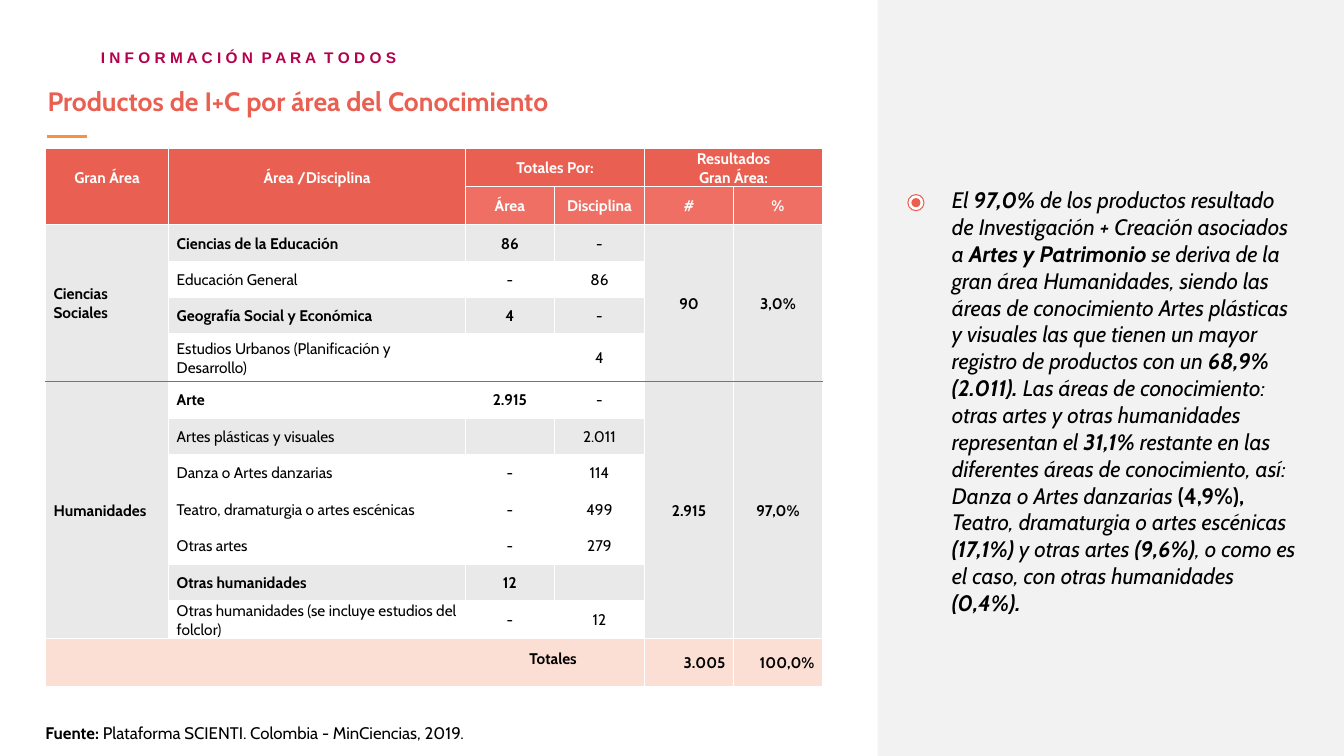
"""Build the slide on research and creation products by area of knowledge."""
from lxml.etree import SubElement
from pptx import Presentation
from pptx.dml.color import RGBColor
from pptx.enum.shapes import MSO_CONNECTOR, MSO_SHAPE
from pptx.enum.text import MSO_ANCHOR, PP_ALIGN
from pptx.oxml import parse_xml
from pptx.oxml.ns import nsdecls, qn
from pptx.util import Pt

CORAL = RGBColor(0xE9, 0x60, 0x52)
LIGHT = RGBColor(0xEF, 0x6F, 0x64)
PEACH = RGBColor(0xFB, 0xDE, 0xD4)
BRICK = RGBColor(0xCA, 0x53, 0x47)
ORANGE = RGBColor(0xF6, 0x92, 0x40)
MAGENTA = RGBColor(0xB6, 0x00, 0x4C)
GREY = RGBColor(0xE9, 0xE9, 0xE9)
PALE = RGBColor(0xF2, 0xF2, 0xF2)
WHITE = RGBColor(0xFF, 0xFF, 0xFF)
BLACK = RGBColor(0, 0, 0)

deck = Presentation()
deck.slide_width, deck.slide_height = Pt(960), Pt(540)
slide = deck.slides.add_slide(deck.slide_layouts[6])
shapes = slide.shapes


def add_text(place, inset, text, size, color, name="Cabin"):
    """Add a text box; parts between asterisks are bold."""
    frame = shapes.add_textbox(*map(Pt, place)).text_frame
    frame.word_wrap = True
    frame.margin_left = frame.margin_right = Pt(inset * 2)
    frame.margin_top = frame.margin_bottom = Pt(inset)
    para = frame.paragraphs[0]
    para.font.size, para.font.name = Pt(size), name
    para.font.color.rgb = color
    for i, part in enumerate(text.split("*")):
        if part:
            run = para.add_run()
            run.text = part
            run.font.bold = i % 2 == 1
    return para


def add_shape(kind, place, fill, line=None):
    """Add a flat shape with an optional outline."""
    shape = shapes.add_shape(kind, *map(Pt, place))
    shape.shadow.inherit = False
    shape.fill.solid()
    shape.fill.fore_color.rgb = fill
    if line is None:
        shape.line.fill.background()
    else:
        shape.line.color.rgb = line
        shape.line.width = Pt(0.75)


tag = add_text((72, 30.7, 295, 18), 0, "*I N F O R M A C I Ó N  P A R A  T O D O S*",
               11, MAGENTA, "Arial")
tag.line_spacing = 1.3
add_text((34, 60.5, 560, 23), 0, "*Productos de I+C por área del Conocimiento*", 19, CORAL)
add_text((22.4, 511, 474, 24.5), 5, "*Fuente: *Plataforma SCIENTI. Colombia - MinCiencias, 2019.",
         12, BLACK)

rule = shapes.add_connector(MSO_CONNECTOR.STRAIGHT, Pt(33.5), Pt(97.7), Pt(62.5), Pt(97.7))
rule.line.color.rgb, rule.line.width = ORANGE, Pt(2.25)
SubElement(rule._element.spPr, qn("a:effectLst"))

add_shape(MSO_SHAPE.RECTANGLE, (627, 0, 333, 540), PALE)
add_shape(MSO_SHAPE.OVAL, (648.5, 139, 11.5, 11.5), WHITE, CORAL)
add_shape(MSO_SHAPE.OVAL, (651, 141.5, 6.5, 6.5), CORAL)
note = add_text(
    (670, 128, 266.5, 359), 5,
    "El *97,0% *de los productos resultado de Investigación + Creación asociados a "
    "*Artes y Patrimonio *se deriva de la gran área Humanidades, siendo las áreas de "
    "conocimiento Artes plásticas y visuales las que tienen un mayor registro de "
    "productos con un *68,9% (2.011). *Las áreas de conocimiento: otras artes y otras "
    "humanidades representan el *31,1% *restante en las diferentes áreas de "
    "conocimiento, así: Danza o Artes danzarias *(4,9%), *Teatro, dramaturgia o artes "
    "escénicas *(17,1%) *y otras artes *(9,6%)*, o como es el caso, con otras "
    "humanidades *(0,4%).*", 16, BLACK)
note.font.italic = True
for run in note.runs:
    if run.text.startswith("(4,9%)"):
        run.font.italic = False

ROWS = [
    ("Gran Área", "Área /Disciplina", "Totales Por:", "", "Resultados\nGran Área:", ""),
    ("", "", "Área", "Disciplina", "#", "%"),
    ("Ciencias Sociales", "Ciencias de la Educación", "86", "-", "90", "3,0%"),
    ("", "Educación General", "-", "86", "", ""),
    ("", "Geografía Social y Económica", "4", "-", "", ""),
    ("", "Estudios Urbanos (Planificación y Desarrollo)", "", "4", "", ""),
    ("Humanidades", "Arte", "2.915", "-", "2.915", "97,0%"),
    ("", "Artes plásticas y visuales", "", "2.011", "", ""),
    ("", "Danza o Artes danzarias", "-", "114", "", ""),
    ("", "Teatro, dramaturgia o artes escénicas", "-", "499", "", ""),
    ("", "Otras artes", "-", "279", "", ""),
    ("", "Otras humanidades", "12", "", "", ""),
    ("", "Otras humanidades (se incluye estudios del folclor)", "-", "12", "", ""),
    ("Totales", "", "", "", "3.005", "100,0%"),
]
WIDTHS = [88, 212, 63.5, 64.5, 63.5, 63.5]
HEIGHTS = [27.3, 27.3, 26, 26, 26, 34] + [26.1] * 6 + [27.3, 34]
MERGES = [(0, 0, 1, 0), (0, 1, 1, 1), (0, 2, 0, 3), (0, 4, 0, 5), (13, 0, 13, 3)]
MERGES += [(top, col, end, col) for top, end in ((2, 5), (6, 12)) for col in (0, 4, 5)]
AREAS = (2, 4, 6, 11)
SHADED = (2, 4, 7, 11)
LAST = len(ROWS) - 1

table = shapes.add_table(len(ROWS), len(WIDTHS), Pt(32.5), Pt(106),
                         Pt(sum(WIDTHS)), Pt(sum(HEIGHTS))).table
table.first_row = table.horz_banding = False
for column, width in zip(table.columns, WIDTHS):
    column.width = Pt(width)
for row, height in zip(table.rows, HEIGHTS):
    row.height = Pt(height)

for r, texts in enumerate(ROWS):
    for c, text in enumerate(texts):
        cell = table.cell(r, c)
        cell.text = text
        cell.vertical_anchor = MSO_ANCHOR.MIDDLE
        cell.margin_left = cell.margin_right = Pt(5.75)
        cell.margin_top, cell.margin_bottom = Pt(0.7), 0
        side = c in (0, 4, 5)
        if r < 2:
            fill = LIGHT if r == 1 and c > 1 else CORAL
        elif r == LAST:
            fill = PEACH
        else:
            fill = GREY if side or r in SHADED else WHITE
        cell.fill.solid()
        cell.fill.fore_color.rgb = fill
        for para in cell.text_frame.paragraphs:
            if r == LAST:
                para.alignment = PP_ALIGN.RIGHT
            elif r < 2 or c > 1:
                para.alignment = PP_ALIGN.CENTER
            font = para.font
            font.size, font.name = Pt(11), "Cabin"
            font.bold = r < 2 or r == LAST or side or (r in AREAS and text != "-")
            font.color.rgb = WHITE if r < 2 else BLACK
        low = r == 5 or (r == 2 and side)
        edges = (("L", WHITE), ("R", WHITE), ("T", BRICK if r == 6 else WHITE),
                 ("B", BRICK if low else WHITE))
        props = cell._tc.get_or_add_tcPr()
        for i, (edge, color) in enumerate(edges):
            props.insert(i, parse_xml(
                f'<a:ln{edge} {nsdecls("a")} w="12700" cap="flat" cmpd="sng" algn="ctr">'
                f'<a:solidFill><a:srgbClr val="{str(color)}"/></a:solidFill>'
                f'<a:prstDash val="solid"/></a:ln{edge}>'))

for top, left, end, right in MERGES:
    table.cell(top, left).merge(table.cell(end, right))
for c in (0, 1):
    table.cell(0, c).margin_bottom = Pt(13)
total = table.cell(LAST, 0)
total.margin_right, total.margin_bottom = Pt(48.5), Pt(6)

deck.save("out.pptx")
